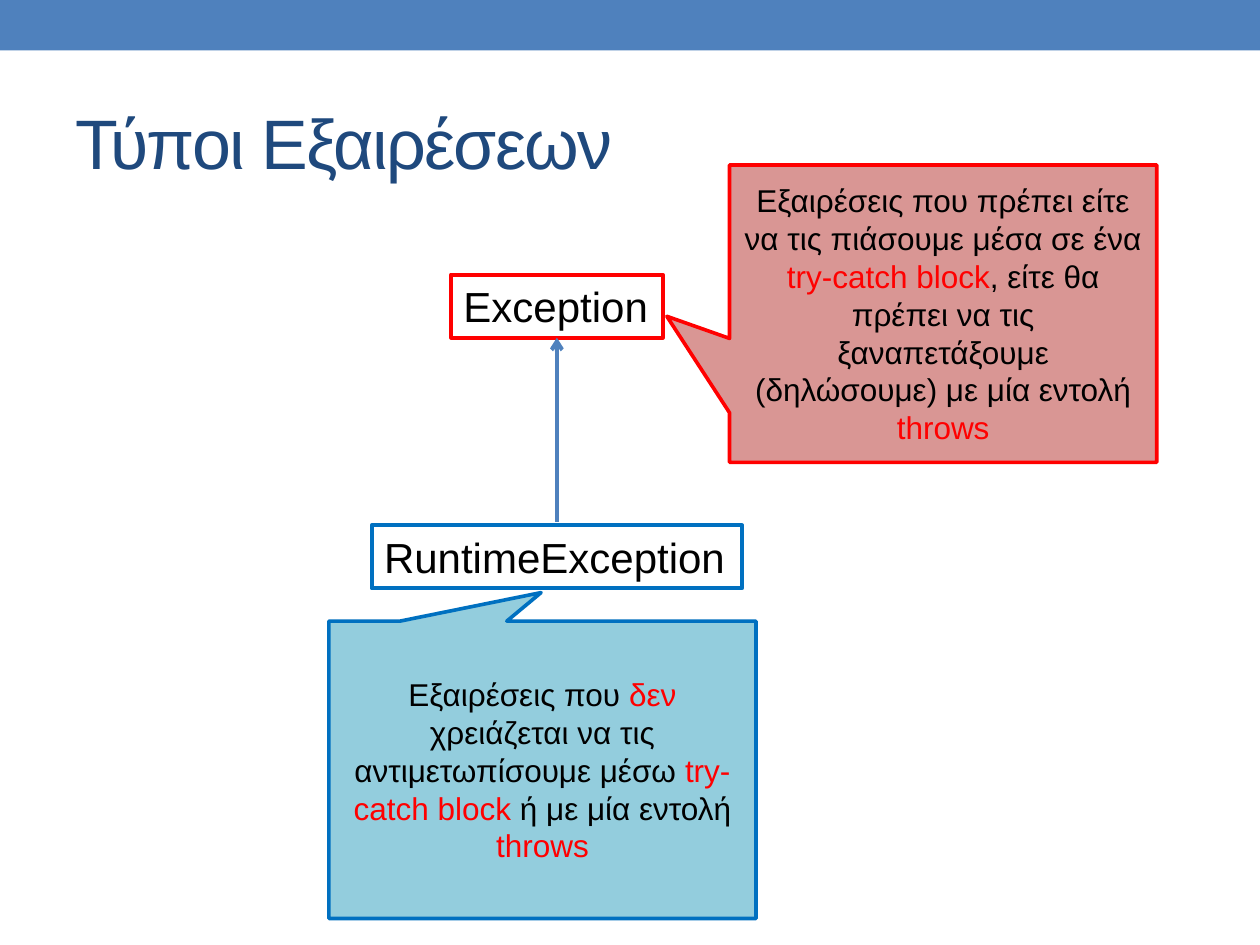
"""Builds the slide on exception types, with two classes and their callouts."""
from pptx import Presentation
from pptx.dml.color import RGBColor
from pptx.enum.shapes import MSO_CONNECTOR, MSO_SHAPE
from pptx.enum.text import MSO_ANCHOR, MSO_AUTO_SIZE, PP_ALIGN
from pptx.oxml.ns import qn
from pptx.util import Inches, Pt
from lxml.etree import SubElement


def add_box(shape_type, box, fill=None, line=None, width=2.25):
    sp = s.shapes.add_shape(shape_type, *map(Inches, box))
    sp.shadow.inherit = False
    if fill:
        sp.fill.solid()
        sp.fill.fore_color.rgb = RGBColor.from_string(fill)
    else:
        sp.fill.background()
    if line:
        sp.line.color.rgb = RGBColor.from_string(line)
        sp.line.width = Pt(width)
    else:
        sp.line.fill.background()
    return sp


def add_run(p, text, size, color):
    r = p.add_run()
    r.text = text
    r.font.name = "Arial"
    r.font.size = Pt(size)
    r.font.color.rgb = RGBColor.from_string(color)
    return r


BLACK, RED, BLUE = "000000", "FF0000", "0070C0"

prs = Presentation()
prs.slide_width, prs.slide_height = Inches(10), Inches(7.5)
s = prs.slides.add_slide(prs.slide_layouts[5])

add_box(MSO_SHAPE.RECTANGLE, (0, 0, 10, 0.4), fill="4F81BD")

title = s.shapes.title
title.left, title.top, title.width, title.height = map(Inches, (0.5, 0.58, 9, 1.08))
tf = title.text_frame
tf.vertical_anchor = MSO_ANCHOR.MIDDLE
p = tf.paragraphs[0]
p.alignment = PP_ALIGN.LEFT
r = add_run(p, "Τύποι Εξαιρέσεων", 40, "1F497D")
r.font._element.set("spc", "-100")

classes = [
    ("Exception", (3.58, 2.18, 1.68, 0.5), RED),
    ("RuntimeException", (2.95, 4.17, 2.94, 0.5), BLUE),
]
for name, box, line in classes:
    sp = add_box(MSO_SHAPE.RECTANGLE, box, line=line)
    tf = sp.text_frame
    tf.word_wrap = False
    tf.auto_size = MSO_AUTO_SIZE.SHAPE_TO_FIT_TEXT
    tf.vertical_anchor = MSO_ANCHOR.TOP
    p = tf.paragraphs[0]
    p.alignment = PP_ALIGN.LEFT
    add_run(p, name, 24, BLACK)

arrow = s.shapes.add_connector(
    MSO_CONNECTOR.STRAIGHT, Inches(4.42), Inches(4.14), Inches(4.42), Inches(2.68))
arrow.line.color.rgb = RGBColor.from_string("4F81BD")
arrow.line.width = Pt(2.25)
SubElement(arrow.line._get_or_add_ln(), qn("a:tailEnd"), type="arrow")
SubElement(arrow._element.spPr, qn("a:effectLst"))

callouts = [
    (5.79, 1.31, (-0.647, 0.009), "D99694", RED, [
        ("Εξαιρέσεις που πρέπει είτε να τις πιάσουμε μέσα σε ένα ", BLACK),
        ("try-catch block", RED),
        (", είτε θα πρέπει να τις ξαναπετάξουμε (δηλώσουμε) με μία εντολή ", BLACK),
        ("throws", RED),
    ]),
    (2.61, 4.93, (-0.003, -0.596), "93CDDD", BLUE, [
        ("Εξαιρέσεις που ", BLACK),
        ("δεν", RED),
        (" χρειάζεται να τις αντιμετωπίσουμε μέσω ", BLACK),
        ("try-catch block", RED),
        (" ή με μία εντολή ", BLACK),
        ("throws", RED),
    ]),
]
for left, top, tip, fill, line, runs in callouts:
    sp = add_box(MSO_SHAPE.RECTANGULAR_CALLOUT, (left, top, 3.39, 2.36), fill, line, 2.08)
    sp.adjustments[0], sp.adjustments[1] = tip
    tf = sp.text_frame
    tf.word_wrap = True
    tf.vertical_anchor = MSO_ANCHOR.MIDDLE
    p = tf.paragraphs[0]
    p.alignment = PP_ALIGN.CENTER
    for text, color in runs:
        add_run(p, text, 18, color)

prs.save("out.pptx")
